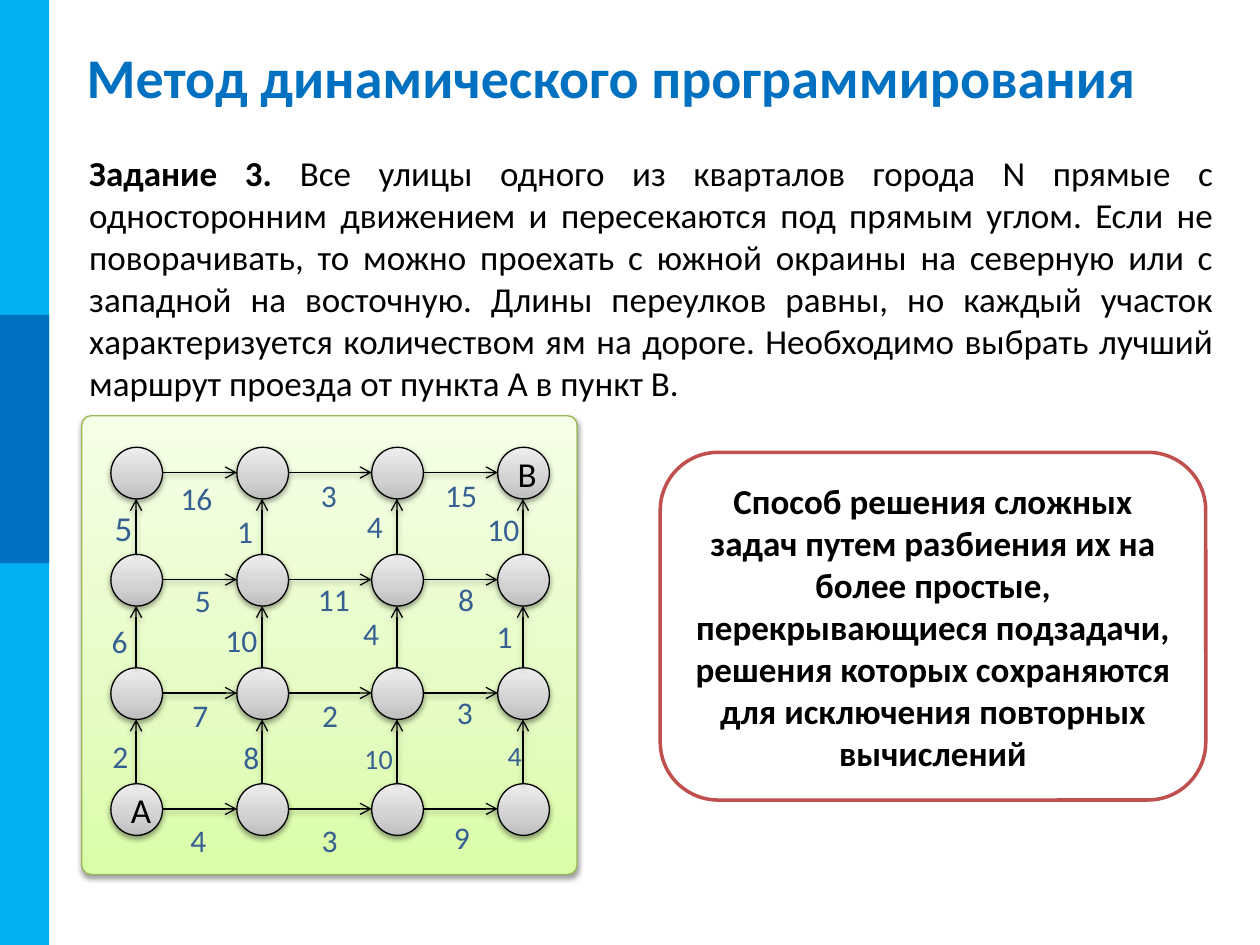
from lxml import etree
from pptx import Presentation
from pptx import util as u
from pptx.dml.color import RGBColor
from pptx.enum import shapes, text
from pptx.oxml import parse_xml
from pptx.oxml.ns import nsdecls, qn

PX = 9144
BLACK = RGBColor(0x00, 0x00, 0x00)
WHITE = RGBColor(0xFF, 0xFF, 0xFF)
SKY = RGBColor(0x00, 0xB0, 0xF0)
BLUE = RGBColor(0x00, 0x70, 0xC0)
STEEL = RGBColor(0x37, 0x60, 0x92)
RED = RGBColor(0xC0, 0x50, 0x4D)
OLIVE = RGBColor(0x98, 0xB9, 0x55)
GREENS = [RGBColor(0xDA, 0xFD, 0xA7), RGBColor(0xE4, 0xFC, 0xC2), RGBColor(0xF5, 0xFF, 0xE7)]
GREYS = [RGBColor(0xBD, 0xBD, 0xBD), RGBColor(0xD1, 0xD1, 0xD1), RGBColor(0xEE, 0xEE, 0xEE)]

SHADOW = (
    f'<a:effectLst {nsdecls("a")}><a:outerShdw blurRad="40000" dist="20000" dir="5400000" '
    'rotWithShape="0"><a:srgbClr val="000000"><a:alpha val="38000"/></a:srgbClr>'
    '</a:outerShdw></a:effectLst>'
)

prs = Presentation()
prs.slide_width = 1000 * PX
prs.slide_height = 750 * PX
s = prs.slides.add_slide(prs.slide_layouts[6])


def add_shape(kind, x, y, w, h, fill, line=None, width=0.75):
    sp = s.shapes.add_shape(kind, x * PX, y * PX, w * PX, h * PX)
    sp.shadow.inherit = False
    if isinstance(fill, list):
        sp.fill.gradient()
        sp.fill.gradient_angle = 90
        stops = sp.element.spPr.find(qn("a:gradFill")).find(qn("a:gsLst"))
        stops.clear()
        for pos, color in zip((0, 35000, 100000), fill):
            gs = etree.SubElement(stops, qn("a:gs"), pos=str(pos))
            etree.SubElement(gs, qn("a:srgbClr"), val=str(color))
        sp.element.spPr.remove(sp.element.spPr.find(qn("a:effectLst")))
    else:
        sp.fill.solid()
        sp.fill.fore_color.rgb = fill
    if line is None:
        sp.line.fill.background()
    else:
        sp.line.color.rgb = line
        sp.line.width = u.Pt(width)
    if isinstance(fill, list):
        sp.element.spPr.append(parse_xml(SHADOW))
    return sp


def set_text(sp, words, size, color, align, bold=False, anchor=text.MSO_ANCHOR.MIDDLE):
    tf = sp.text_frame
    tf.word_wrap = True
    tf.vertical_anchor = anchor
    p = tf.paragraphs[0]
    p.alignment = align
    p.font.name = "Calibri"
    p.font.size = u.Pt(size)
    p.font.color.rgb = color
    p.font.bold = bold
    p.add_run().text = words
    return p


RECT = shapes.MSO_SHAPE.RECTANGLE
ROUND = shapes.MSO_SHAPE.ROUNDED_RECTANGLE
CENTER = text.PP_ALIGN.CENTER

add_shape(RECT, 0, 0, 39, 750, SKY)
add_shape(RECT, 0, 250, 39, 197, BLUE)

title = s.shapes.add_textbox(59 * PX, 30 * PX, 906 * PX, 61 * PX)
set_text(title, "Метод динамического программирования", 32, BLUE, text.PP_ALIGN.LEFT, bold=True)

task = s.shapes.add_textbox(61 * PX, 115 * PX, 912 * PX, 212 * PX)
p = set_text(task, "Задание 3. ", 20, BLACK, text.PP_ALIGN.JUSTIFY, anchor=text.MSO_ANCHOR.TOP)
p.runs[0].font.bold = True
r = p.add_run()
r.text = (
    "Все улицы одного из кварталов города N прямые с односторонним движением и "
    "пересекаются под прямым углом. Если не поворачивать, то можно проехать с южной "
    "окраины на северную или с западной на восточную. Длины переулков равны, но каждый "
    "участок характеризуется количеством ям на дороге. Необходимо выбрать лучший маршрут "
    "проезда от пункта A в пункт B."
)

panel = add_shape(ROUND, 65, 330, 393, 364, GREENS, OLIVE)
panel.adjustments[0] = 0.02

D = 41
COLS = [88, 188, 295, 395]
ROWS = [622, 530, 440, 355]
names = {(88, 622): "A", (395, 355): "B"}
for y in ROWS:
    for x in COLS:
        node = add_shape(shapes.MSO_SHAPE.OVAL, x, y, D, D, GREYS, BLACK)
        if (x, y) in names:
            set_text(node, names[x, y], 20, BLACK, CENTER)

R = D // 2
streets = [(x1 + D, y + R, x2, y + R) for y in ROWS for x1, x2 in zip(COLS, COLS[1:])]
streets += [(x + R, y1, x + R, y2 + D) for x in COLS for y1, y2 in zip(ROWS, ROWS[1:])]
for street in streets:
    cn = s.shapes.add_connector(shapes.MSO_CONNECTOR.STRAIGHT, *[v * PX for v in street])
    cn.line.color.rgb = BLACK
    cn.line.width = u.Pt(0.75)
    etree.SubElement(cn.line._get_or_add_ln(), qn("a:tailEnd"), type="arrow")
    cn.element.spPr.append(parse_xml(SHADOW))

pits = {
    (39, 35): [("2", 76, 582, 18), ("4", 138, 649, 18), ("3", 242, 649, 18), ("9", 347, 647, 18)],
    (45, 39): [("8", 177, 581, 18), ("4", 386, 580, 16), ("4", 272, 483, 18),
               ("1", 378, 485, 18), ("4", 275, 398, 18)],
    (59, 37): [("10", 271, 583, 16), ("10", 162, 489, 18), ("1", 165, 403, 18),
               ("10", 370, 401, 18)],
    (66, 38): [("7", 126, 548, 18), ("2", 229, 548, 18), ("3", 336, 546, 18),
               ("6", 62, 490, 18), ("5", 128, 457, 18), ("11", 232, 456, 18),
               ("8", 337, 456, 18), ("5", 65, 400, 20), ("16", 123, 376, 18),
               ("3", 228, 374, 18), ("15", 333, 374, 18)],
}
for (w, h), labels in pits.items():
    for count, x, y, size in labels:
        label = s.shapes.add_textbox(x * PX, y * PX, w * PX, h * PX)
        set_text(label, count, size, STEEL, CENTER)

definition = add_shape(ROUND, 524, 359, 433, 276, WHITE, RED, 2)
set_text(
    definition,
    "Способ решения сложных задач путем разбиения их на более простые, перекрывающиеся "
    "подзадачи, решения которых сохраняются для исключения повторных вычислений",
    20, BLACK, CENTER, bold=True,
)

prs.save("out.pptx")
